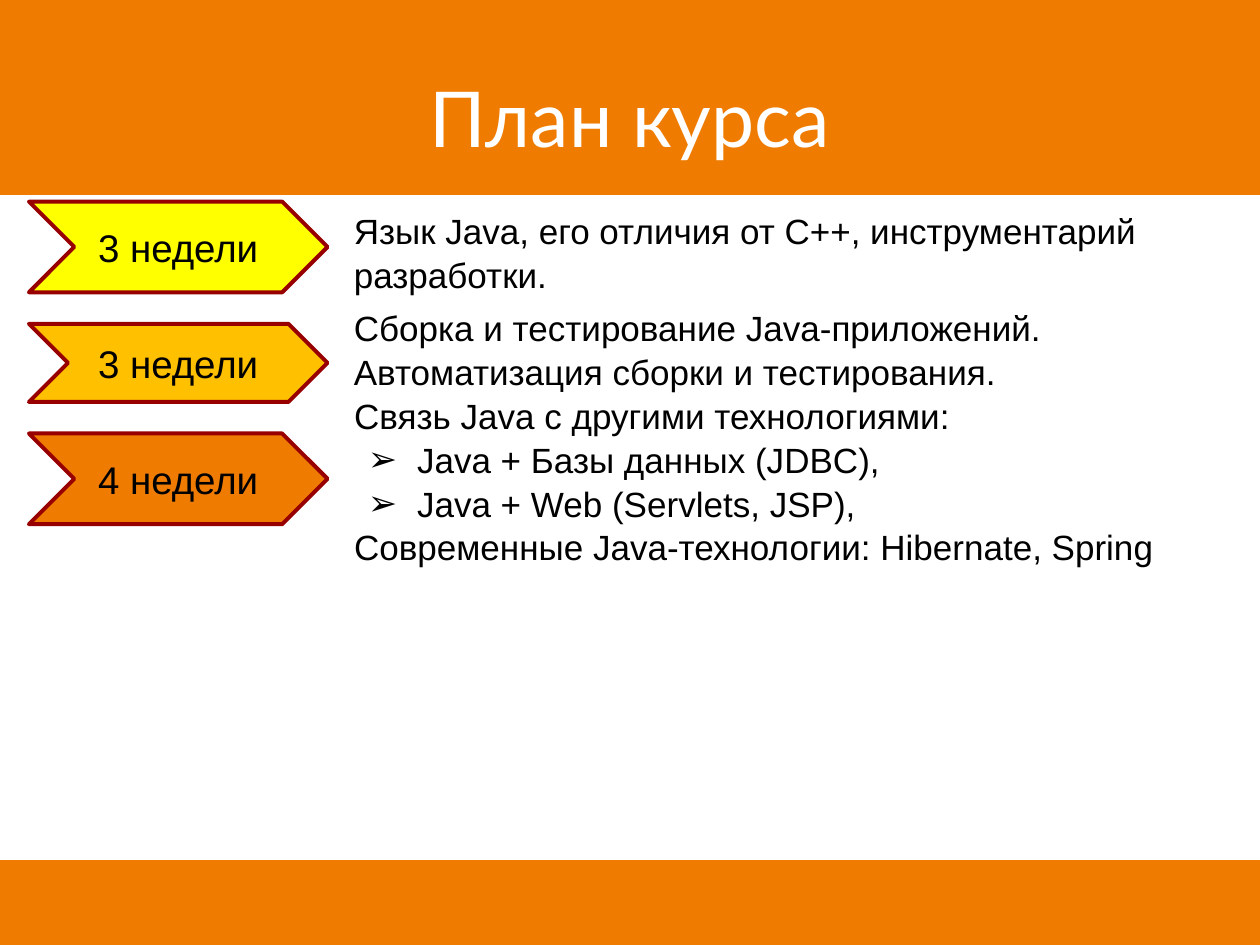
from lxml import etree
from pptx import Presentation
from pptx.dml.color import RGBColor
from pptx.enum.shapes import MSO_SHAPE
from pptx.enum.text import MSO_ANCHOR, MSO_AUTO_SIZE, PP_ALIGN
from pptx.oxml.ns import qn
from pptx.util import Inches, Pt

RECT, CHEVRON = MSO_SHAPE.RECTANGLE, MSO_SHAPE.CHEVRON
TOP, MIDDLE = MSO_ANCHOR.TOP, MSO_ANCHOR.MIDDLE
LEFT, CENTER = PP_ALIGN.LEFT, PP_ALIGN.CENTER
NO_FIT = MSO_AUTO_SIZE.NONE

ORANGE = RGBColor(0xEF, 0x7C, 0x00)
AMBER = RGBColor(0xFF, 0xC0, 0x00)
YELLOW = RGBColor(0xFF, 0xFF, 0x00)
MAROON = RGBColor(0x98, 0x00, 0x00)
BLACK = RGBColor(0, 0, 0)
WHITE = RGBColor(0xFF, 0xFF, 0xFF)

WIDTH, HEIGHT = 10, 7.5
# Two columns: left edge and width
STEP_COL = (0.23, 2.37)
TEXT_COL = (2.71, 7.07)

# Label, fill, top and height of each stage
STEPS = [
    ("3 недели", YELLOW, 1.6, 0.72),
    ("3 недели", AMBER, 2.57, 0.62),
    ("4 недели", ORANGE, 3.44, 0.72),
]
# Text, top and height of each plain topic
TOPICS = [
    ("Язык Java, его отличия от С++, инструментарий разработки.", 1.55, 0.82),
    ("Сборка и тестирование Java-приложений. "
     "Автоматизация сборки и тестирования.", 2.32, 0.82),
]
# Lines of the last topic, with True for a bullet
LINES = [
    ("Связь Java с другими технологиями:", False),
    ("Java + Базы данных (JDBC),", True),
    ("Java + Web (Servlets, JSP),", True),
    ("Современные Java-технологии: Hibernate, Spring", False),
]


def place(shape, col, top, height):
    shape.left, shape.width = map(Inches, col)
    shape.top, shape.height = Inches(top), Inches(height)


def set_frame(frame, anchor, pad):
    frame.word_wrap = True
    frame.auto_size = NO_FIT
    frame.vertical_anchor = anchor
    frame.margin_left = frame.margin_right = Inches(0.1)
    frame.margin_top = frame.margin_bottom = Inches(pad)


def style(para, size, color=BLACK, name="Arial", align=LEFT):
    para.alignment = align
    para.space_before = Pt(0)
    for run in para.runs:
        run.font.size = Pt(size)
        run.font.name = name
        run.font.color.rgb = color


def set_bullet(para, shown):
    """Give the paragraph an arrow bullet, or clear the inherited one."""
    props = para._p.get_or_add_pPr()
    props.set("marL", str(Inches(0.5) if shown else 0))
    props.set("indent", str(Inches(-0.39) if shown else 0))
    if shown:
        etree.SubElement(props, qn("a:buChar"), char="➢")
    else:
        etree.SubElement(props, qn("a:buNone"))


def add_shape(slide, kind, col, top, height, fill, line, weight):
    shape = slide.shapes.add_shape(kind, 0, 0, 0, 0)
    place(shape, col, top, height)
    shape.shadow.inherit = False
    shape.fill.solid()
    shape.fill.fore_color.rgb = fill
    shape.line.color.rgb = line
    shape.line.width = Pt(weight)
    return shape


def add_band(slide, top, height):
    band = add_shape(slide, RECT, (0, WIDTH), top, height, ORANGE, ORANGE, 1)
    # Bands lie behind the title
    slide.shapes._spTree.insert(2, band._element)


def add_title(slide, text):
    title = slide.shapes.title
    place(title, (0.5, WIDTH - 1), 0.3, 1.25)
    title.text_frame.text = text
    set_frame(title.text_frame, MIDDLE, 0.05)
    style(title.text_frame.paragraphs[0], 44, WHITE, "Lato", CENTER)


def add_step(slide, text, fill, top, height):
    step = add_shape(slide, CHEVRON, STEP_COL, top, height, fill, MAROON, 2.25)
    step.adjustments[0] = 0.5
    step.text_frame.text = text
    set_frame(step.text_frame, MIDDLE, 0.1)
    style(step.text_frame.paragraphs[0], 22, align=CENTER)


def fill_topic(box, lines, top, height):
    place(box, TEXT_COL, top, height)
    frame = box.text_frame
    set_frame(frame, TOP, 0.1)
    frame.text = "\n".join(text for text, _ in lines)
    for para, (_, shown) in zip(frame.paragraphs, lines):
        set_bullet(para, shown)
        style(para, 20)
        para.line_spacing = 1.04


def main():
    deck = Presentation()
    deck.slide_width, deck.slide_height = Inches(WIDTH), Inches(HEIGHT)
    slide = deck.slides.add_slide(deck.slide_layouts[1])

    # Header and footer
    add_band(slide, -0.03, 1.57)
    add_band(slide, 6.83, 0.67)
    add_title(slide, "План курса")

    # Stages and their topics
    for step in STEPS:
        add_step(slide, *step)
    for text, top, height in TOPICS:
        box = slide.shapes.add_textbox(0, 0, 0, 0)
        fill_topic(box, [(text, False)], top, height)
    fill_topic(slide.placeholders[1], LINES, 3.02, 1.55)

    deck.save("out.pptx")


if __name__ == "__main__":
    main()
